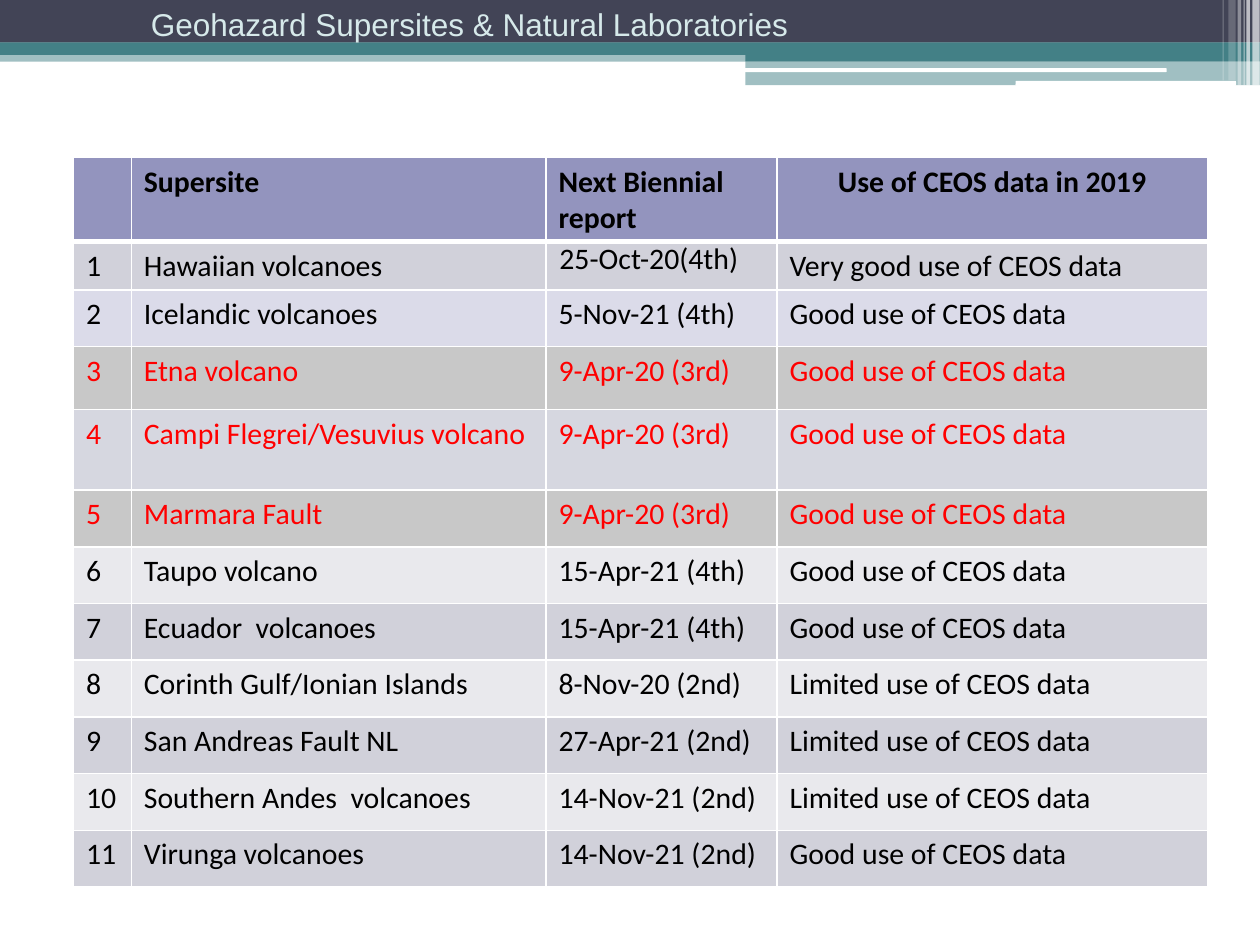
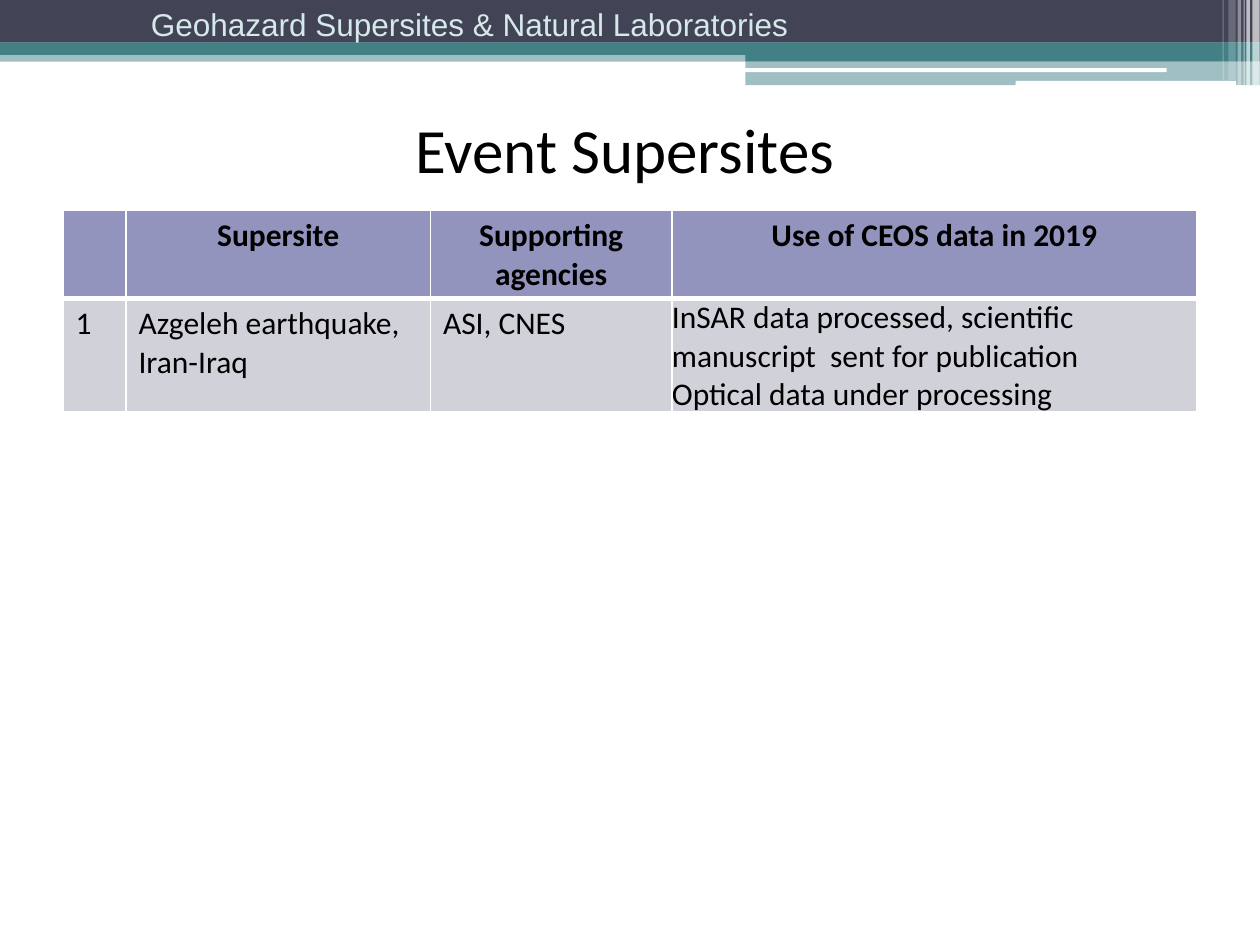
from lxml import etree
from pptx import Presentation
from pptx.dml.color import RGBColor
from pptx.enum import shapes, text
from pptx.oxml import ns
from pptx.util import Pt

SLATE, TEAL, WHITE, BLACK, RED = "424456", "438086", "FFFFFF", "000000", "FF0000"
HEADER_FILL, DARK_ROW, LIGHT_ROW = "9394BE", "D1D1DA", "E9E9ED"
RECTANGLE = shapes.MSO_SHAPE.RECTANGLE
ROUNDED = shapes.MSO_SHAPE.ROUNDED_RECTANGLE
CENTER = text.PP_ALIGN.CENTER

# Left, top, width, height, preset shape, colour, opacity in percent
banner_parts = [
    (0, 28.8, 720, 6.4, RECTANGLE, TEAL, 50),
    (0, 0, 720, 24.4, RECTANGLE, SLATE, 100),
    (0, 24.2, 720, 7.2, RECTANGLE, TEAL, 100),
    (426, 28, 294, 7, RECTANGLE, TEAL, 100),
    (426, 34.8, 294, 13.8, RECTANGLE, TEAL, 50),
    (425.5, 39, 241.2, 2.2, ROUNDED, WHITE, 100),
    (580.3, 46.2, 126, 2.8, ROUNDED, WHITE, 100),
]
# Left, width, height, opacity of the fading stripes at the right edge
for left, width, height, opacity in [
    (715.6, 4.2, 49, 65), (712.2, 2, 49, 65), (710.6, 0.7, 49, 60),
    (707.2, 2, 49, 40), (702, 4.2, 46, 20), (698.6, 0.7, 46, 30),
]:
    banner_parts.append((left, 0, width, height, RECTANGLE, WHITE, opacity))

supersites = [
    ("Hawaiian volcanoes", "25-Oct-20(4th)", "Very good"),
    ("Icelandic volcanoes", "5-Nov-21 (4th)", "Good"),
    ("Etna volcano", "9-Apr-20 (3rd)", "Good"),
    ("Campi Flegrei/Vesuvius volcano", "9-Apr-20 (3rd)", "Good"),
    ("Marmara Fault", "9-Apr-20 (3rd)", "Good"),
    ("Taupo volcano", "15-Apr-21 (4th)", "Good"),
    ("Ecuador  volcanoes", "15-Apr-21 (4th)", "Good"),
    ("Corinth Gulf/Ionian Islands", "8-Nov-20 (2nd)", "Limited"),
    ("San Andreas Fault NL", "27-Apr-21 (2nd)", "Limited"),
    ("Southern Andes  volcanoes", "14-Nov-21 (2nd)", "Limited"),
    ("Virunga volcanoes", "14-Nov-21 (2nd)", "Good"),
]
supersite_rows = [("", "Supersite", "Next Biennial report", "Use of CEOS data in 2019")]
for number, (site, report, use) in enumerate(supersites, 1):
    supersite_rows.append((str(number), site, report, f"{use} use of CEOS data"))

event_rows = [
    ("", "Supersite", "Supporting agencies", "Use of CEOS data in 2019"),
    ("1", "Azgeleh earthquake, Iran-Iraq", "ASI, CNES",
     "InSAR data processed, scientific manuscript  sent for publication\n"
     "Optical data under processing"),
]


def color(hex_string):
    return RGBColor.from_string(hex_string)


def add_grid(slide, left, top, widths, heights, rows, size):
    """Add a table with white rules, a coloured header and alternating rows."""
    frame = slide.shapes.add_table(len(rows), len(widths), Pt(left), Pt(top),
                                   Pt(sum(widths)), Pt(sum(heights)))
    table = frame.table
    table.horz_banding = False
    for column, width in zip(table.columns, widths):
        column.width = Pt(width)
    for row_index, (row, height, values) in enumerate(zip(table.rows, heights, rows)):
        row.height = Pt(height)
        header = row_index == 0
        fill = HEADER_FILL if header else DARK_ROW if row_index % 2 else LIGHT_ROW
        for cell, value in zip(row.cells, values):
            properties = cell._tc.get_or_add_tcPr()
            for side in "LRTB":
                thick = (header and side == "B") or (row_index == 1 and side == "T")
                line = etree.SubElement(properties, ns.qn(f"a:ln{side}"),
                                        w=str(Pt(3 if thick else 1)))
                solid = etree.SubElement(line, ns.qn("a:solidFill"))
                etree.SubElement(solid, ns.qn("a:srgbClr"), val=WHITE)
            cell.fill.solid()
            cell.fill.fore_color.rgb = color(fill)
            cell.text_frame.text = value
            for paragraph in cell.text_frame.paragraphs:
                paragraph.font.size = Pt(size)
                for run in paragraph.runs:
                    run.font.name = "Calibri"
                    run.font.size = Pt(size)
                    run.font.bold = header
                    run.font.color.rgb = color(BLACK)
    return table


presentation = Presentation()
presentation.slide_width, presentation.slide_height = Pt(720), Pt(540)
blank_layout, title_layout = presentation.slide_layouts[6], presentation.slide_layouts[5]
supersite_slide = presentation.slides.add_slide(blank_layout)
event_slide = presentation.slides.add_slide(title_layout)

# Shared banner
for slide in presentation.slides:
    for left, top, width, height, preset, hex_string, opacity in banner_parts:
        shape = slide.shapes.add_shape(preset, Pt(left), Pt(top), Pt(width), Pt(height))
        shape.shadow.inherit = False
        shape.line.fill.background()
        shape.fill.solid()
        shape.fill.fore_color.rgb = color(hex_string)
        if opacity < 100:
            fill_color = shape._element.spPr.find(".//" + ns.qn("a:srgbClr"))
            etree.SubElement(fill_color, ns.qn("a:alpha"), val=str(opacity * 1000))
    banner_text = slide.shapes.add_textbox(Pt(79.2), Pt(-0.7), Pt(391), Pt(29))
    banner_text.text_frame.text = "Geohazard Supersites & Natural Laboratories"
    font = banner_text.text_frame.paragraphs[0].runs[0].font
    font.name, font.size = "Arial", Pt(18)
    font.color.rgb = color("D6E9EA")

# Permanent supersites
row_heights = [32.4, 25.2, 32.4, 36, 46] + [32.4] * 7
supersite_table = add_grid(supersite_slide, 42, 90, [33, 237, 132, 246],
                           row_heights, supersite_rows, 17)
supersite_table.cell(0, 3).text_frame.paragraphs[0].alignment = CENTER
first_report = supersite_table.cell(1, 2)
first_report.margin_left = Pt(7.7)
first_report.margin_right = first_report.margin_top = first_report.margin_bottom = 0
for column_index in range(4):
    supersite_table.cell(2, column_index).fill.fore_color.rgb = color("DBDBE9")
    for row_index, fill in [(3, "C8C8C8"), (4, "D6D7E0"), (5, "C8C8C8")]:
        cell = supersite_table.cell(row_index, column_index)
        cell.fill.fore_color.rgb = color(fill)
        cell.text_frame.paragraphs[0].runs[0].font.color.rgb = color(RED)

# Event supersites
title = event_slide.shapes.title
title.left, title.top, title.width, title.height = Pt(24), Pt(48.5), Pt(666), Pt(72)
title.text_frame.text = "Event Supersites"
title.text_frame.vertical_anchor = text.MSO_ANCHOR.MIDDLE
title_paragraph = title.text_frame.paragraphs[0]
title_paragraph.alignment = CENTER
title_font = title_paragraph.runs[0].font
title_font.name, title_font.size = "Calibri", Pt(36)
title_font.color.rgb = color(BLACK)

event_table = add_grid(event_slide, 36, 120.2, [36, 174, 138, 300],
                       [48, 29.5], event_rows, 18)
for column_index in range(1, 4):
    event_table.cell(0, column_index).text_frame.paragraphs[0].alignment = CENTER
event_table.cell(0, 2).vertical_anchor = text.MSO_ANCHOR.MIDDLE
data_use = event_table.cell(1, 3)
data_use.vertical_anchor = text.MSO_ANCHOR.MIDDLE
data_use.margin_left = data_use.margin_right = 0
data_use.margin_top = data_use.margin_bottom = 0

presentation.save("out.pptx")
